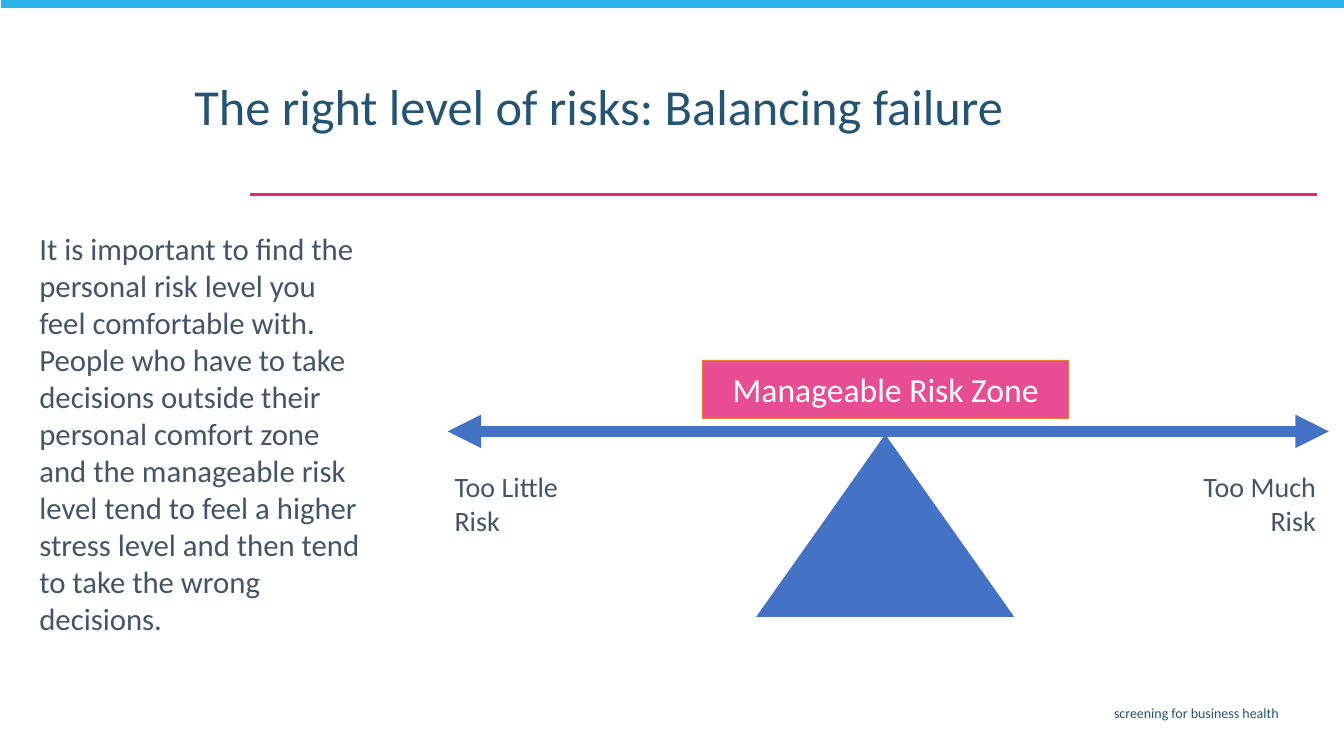
"""Build the slide on balancing the right level of risk."""
from lxml import etree
from pptx import Presentation
from pptx.dml.color import RGBColor
from pptx.enum.shapes import MSO_CONNECTOR, MSO_SHAPE
from pptx.enum.text import MSO_ANCHOR, PP_ALIGN
from pptx.oxml.ns import qn
from pptx.util import Pt

PX = 9144
LEFT, CENTER, RIGHT = PP_ALIGN.LEFT, PP_ALIGN.CENTER, PP_ALIGN.RIGHT
MIDDLE = MSO_ANCHOR.MIDDLE
STRAIGHT = MSO_CONNECTOR.STRAIGHT
RECTANGLE, TRIANGLE = MSO_SHAPE.RECTANGLE, MSO_SHAPE.ISOSCELES_TRIANGLE
COLORS = {
    "sky": "29B3E8",
    "rule": "EC2179",
    "title": "245473",
    "body": "44546A",
    "scale": "4472C4",
    "zone": "E64D92",
    "zone_edge": "ED7D31",
    "white": "FFFFFF",
}


def color(name):
    return RGBColor.from_string(COLORS[name])


def write(frame, text, size, ink, align):
    frame.word_wrap = True
    frame.text = text
    paragraph = frame.paragraphs[0]
    paragraph.alignment = align
    font = paragraph.runs[0].font
    font.name = "Calibri"
    font.size = Pt(size)
    font.color.rgb = color(ink)


prs = Presentation()
prs.slide_width, prs.slide_height = 1333 * PX, 750 * PX
slide = prs.slides.add_slide(prs.slide_layouts[6])
shapes = slide.shapes

blocks = {}
for part, kind, left, top, width, height, fill in [
    ("band", RECTANGLE, 1, -2, 1334, 10, "sky"),
    ("fulcrum", TRIANGLE, 750, 431, 256, 181, "scale"),
    ("zone", RECTANGLE, 697, 357, 363, 58, "zone"),
]:
    block = shapes.add_shape(kind, left * PX, top * PX, width * PX, height * PX)
    block.shadow.inherit = False
    block.fill.solid()
    block.fill.fore_color.rgb = color(fill)
    block.line.fill.background()
    blocks[part] = block

zone = blocks["zone"]
zone.line.color.rgb = color("zone_edge")
zone.line.width = Pt(0.5)
zone.text_frame.vertical_anchor = MIDDLE
write(zone.text_frame, "Manageable Risk Zone", 24, "white", CENTER)

for start, end, y, ink, weight, ends in [
    (1306, 248, 193, "rule", 1.5, []),
    (444, 1318, 428, "scale", 8, ["headEnd", "tailEnd"]),
]:
    beam = shapes.add_connector(STRAIGHT, start * PX, y * PX, end * PX, y * PX)
    beam.line.color.rgb = color(ink)
    beam.line.width = Pt(weight)
    for tag in ends:
        etree.SubElement(beam.line._get_or_add_ln(), qn(f"a:{tag}"), type="triangle")
    etree.SubElement(beam._element.spPr, qn("a:effectLst"))

advice = (
    "It is important to find the personal risk level you feel comfortable with. "
    "People who have to take decisions outside their personal comfort zone and the "
    "manageable risk level tend to feel a higher stress level and then tend to take "
    "the wrong decisions."
)
frames = {}
for part, text, left, top, width, height, size, ink, align in [
    ("footer", "screening for business health", 365, 694, 913, 29, 10, "title", RIGHT),
    ("title", "The right level of risks: Balancing failure", 183, 76, 968, 76, 36, "title", LEFT),
    ("advice", advice, 30, 224, 339, 416, 22, "body", LEFT),
    ("low", "Too Little Risk", 441, 461, 160, 77, 20, "body", LEFT),
    ("high", "Too Much Risk", 1155, 461, 160, 77, 20, "body", RIGHT),
]:
    frame = shapes.add_textbox(left * PX, top * PX, width * PX, height * PX).text_frame
    write(frame, text, size, ink, align)
    frames[part] = frame

frames["title"].paragraphs[0].line_spacing = 0.9
frames["advice"].margin_left = frames["advice"].margin_right = 9 * PX
frames["advice"].margin_top = frames["advice"].margin_bottom = 4 * PX

prs.save("out.pptx")
